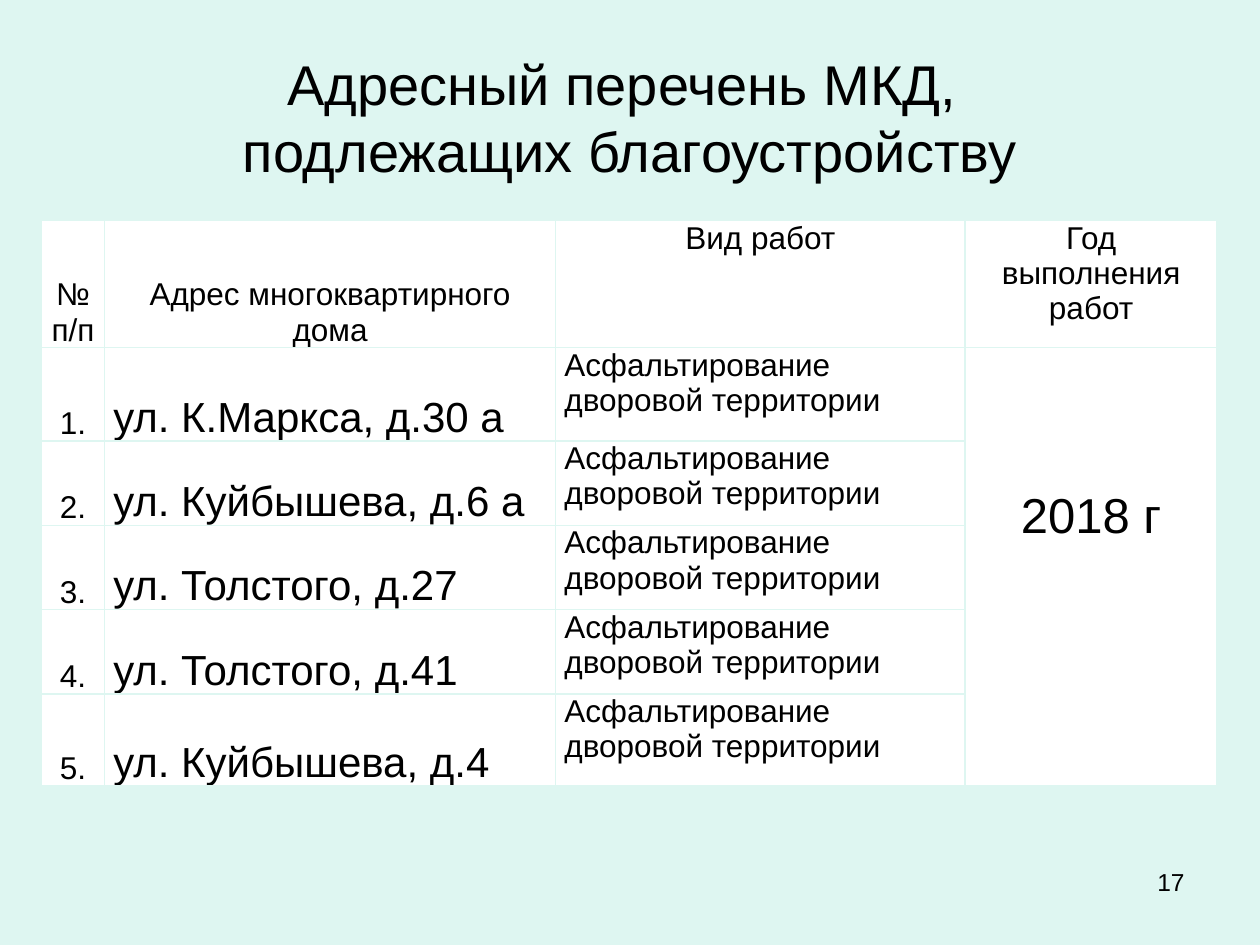
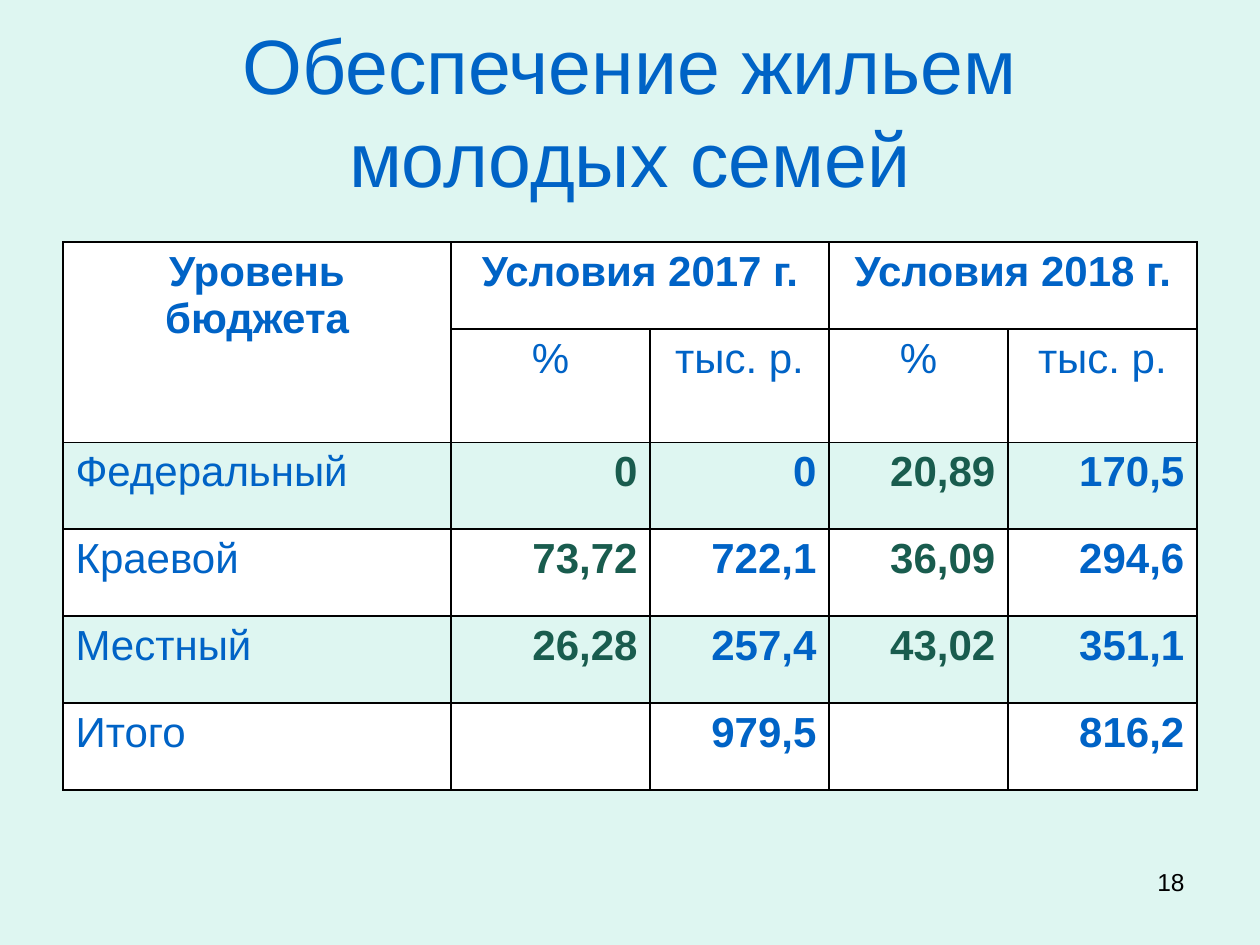
from lxml.etree import SubElement
from pptx import Presentation
from pptx.dml.color import RGBColor
from pptx.enum.text import MSO_ANCHOR as Anchor, PP_ALIGN as Align
from pptx.oxml.ns import qn
from pptx.util import Inches, Pt

MINT = RGBColor(0xDE, 0xF6, 0xF1)
WHITE = RGBColor(0xFF, 0xFF, 0xFF)
BLACK = RGBColor(0, 0, 0)
BLUE = RGBColor(0x00, 0x63, 0xC6)
GREEN = RGBColor(0x19, 0x5C, 0x4E)
FONT = "Arial"

HOMES = ["ул. К.Маркса, д.30 а", "ул. Куйбышева, д.6 а", "ул. Толстого, д.27",
         "ул. Толстого, д.41", "ул. Куйбышева, д.4"]
WORK = "Асфальтирование дворовой территории"
BUDGET = [
    ("Федеральный", "0", "0", "20,89", "170,5"),
    ("Краевой", "73,72", "722,1", "36,09", "294,6"),
    ("Местный", "26,28", "257,4", "43,02", "351,1"),
    ("Итого", "", "979,5", "", "816,2"),
]


class Deck:
    def __init__(self):
        self.prs = Presentation()
        self.prs.slide_width, self.prs.slide_height = Inches(10), Inches(7.5)
        fill = self.prs.slide_master.background.fill
        fill.solid()
        fill.fore_color.rgb = MINT

    def page(self, title, top, size, color, number):
        """Start a slide with its title and page number."""
        self.slide = self.prs.slides.add_slide(self.prs.slide_layouts[6])
        self.label(title, (0.5, top, 9, 1.25), size, color, Align.CENTER, Anchor.MIDDLE)
        self.label(number, (7.17, 6.83, 2.33, 0.52), 14, BLACK, Align.RIGHT)

    def style(self, frame, text, size, color, align, bold=False):
        """Put text in a frame and format its paragraphs."""
        frame.text = text
        for para in frame.paragraphs:
            para.alignment = align
            font = para.font
            font.name, font.size, font.bold = FONT, Pt(size), bold
            font.color.rgb = color

    def label(self, text, box, size, color, align, anchor=Anchor.TOP):
        frame = self.slide.shapes.add_textbox(*map(Inches, box)).text_frame
        frame.word_wrap = True
        frame.vertical_anchor = anchor
        self.style(frame, text, size, color, align)

    def table(self, left, top, cols, rows, line):
        """Add a plain white table with all borders in one colour."""
        frame = self.slide.shapes.add_table(
            len(rows), len(cols), Inches(left), Inches(top),
            Inches(sum(cols)), Inches(sum(rows)))
        grid = frame.table
        grid.first_row = grid.horz_banding = False
        for col, width in zip(grid.columns, cols):
            col.width = Inches(width)
        for row, height in zip(grid.rows, rows):
            row.height = Inches(height)
        for cell in grid.iter_cells():
            self.border(cell, line)
            self.paint(cell, WHITE)
        return grid

    def border(self, cell, color):
        props = cell._tc.get_or_add_tcPr()
        for side in ("lnL", "lnR", "lnT", "lnB"):
            edge = SubElement(props, qn(f"a:{side}"), w=str(Pt(1)))
            fill = SubElement(edge, qn("a:solidFill"))
            SubElement(fill, qn("a:srgbClr"), val=str(color))

    def paint(self, cell, color):
        cell.fill.solid()
        cell.fill.fore_color.rgb = color

    def cell(self, cell, text, size, color, align, bold=False, anchor=Anchor.TOP):
        cell.vertical_anchor = anchor
        self.style(cell.text_frame, text, size, color, align, bold)


def homes(deck):
    deck.page("Адресный перечень МКД, \vподлежащих благоустройству", 0.3, 32, BLACK, "17")
    grid = deck.table(0.33, 1.75, [0.5, 3.58, 3.25, 2],
                      [1.01, 0.74, 0.67, 0.67, 0.67, 0.73], MINT)
    for cell in grid.iter_cells():
        cell.margin_left = cell.margin_right = Inches(0.07)
        cell.margin_top = cell.margin_bottom = 0

    low, high = Anchor.BOTTOM, Anchor.TOP
    heads = ["№ п/п", "Адрес многоквартирного дома", "Вид работ", "Год выполнения работ"]
    for col, (head, anchor) in enumerate(zip(heads, (low, low, high, high))):
        deck.cell(grid.cell(0, col), head, 18, BLACK, Align.CENTER, anchor=anchor)
    for row, home in enumerate(HOMES, 1):
        deck.cell(grid.cell(row, 0), f"{row}.", 18, BLACK, Align.CENTER, anchor=low)
        deck.cell(grid.cell(row, 1), home, 24, BLACK, Align.LEFT, anchor=low)
        deck.cell(grid.cell(row, 2), WORK, 18, BLACK, Align.LEFT)

    year = grid.cell(1, 3)
    year.merge(grid.cell(5, 3))
    year.margin_top = Inches(1.12)
    deck.cell(year, "2018 г", 28, BLACK, Align.CENTER)


def budget(deck):
    deck.page("Обеспечение жильем молодых семей", 0.25, 44, BLUE, "18")
    grid = deck.table(0.5, 1.92, [3.08, 1.58, 1.42, 1.42, 1.5],
                      [0.69, 0.85] + [0.69] * 4, BLACK)

    spans = [("Уровень\nбюджета", 0, (1, 0)), ("Условия 2017 г.", 1, (0, 2)),
             ("Условия 2018 г.", 3, (0, 4))]
    for text, col, end in spans:
        head = grid.cell(0, col)
        head.merge(grid.cell(*end))
        deck.cell(head, text, 24, BLUE, Align.CENTER, True)
    for col, unit in enumerate(["%", "тыс. р."] * 2, 1):
        deck.cell(grid.cell(1, col), unit, 24, BLUE, Align.CENTER)

    for row, (level, *sums) in enumerate(BUDGET, 2):
        deck.cell(grid.cell(row, 0), level, 24, BLUE, Align.LEFT)
        for col, value in enumerate(sums, 1):
            color = GREEN if col % 2 else BLUE
            deck.cell(grid.cell(row, col), value, 24, color, Align.RIGHT, True)
        if row % 2 == 0:
            for cell in grid.rows[row].cells:
                deck.paint(cell, MINT)


def main():
    deck = Deck()
    homes(deck)
    budget(deck)
    deck.prs.save("out.pptx")


if __name__ == "__main__":
    main()
